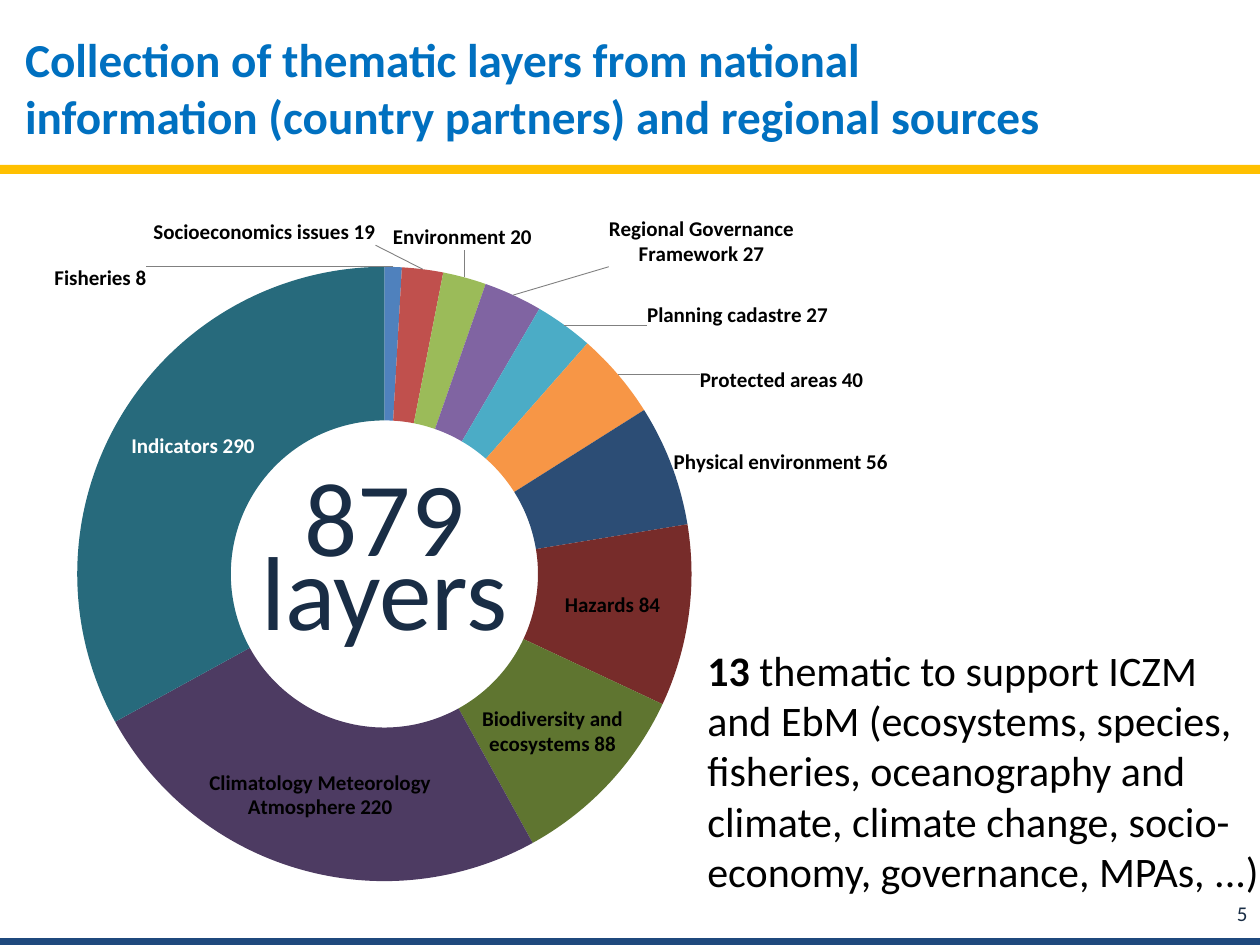
import math
import pptx
import pptx.chart.data
import pptx.dml.color
import pptx.enum.chart
import pptx.enum.shapes
import pptx.enum.text
import pptx.oxml
import pptx.oxml.ns
import pptx.util

SCALE = 914400 / 126
FACE = "Calibri"
INK = {
    "gold": "FFC000", "navy": "1F497D", "title": "0070C0", "dark": "192D45",
    "black": "000000", "white": "FFFFFF", "grey": "808080",
}
THEMES = [
    ("Fisheries", 8, "4F81BD"),
    ("Socioeconomics issues", 19, "C0504D"),
    ("Environment", 20, "9BBB59"),
    ("Regional Governance Framework", 27, "8064A2"),
    ("Planning cadastre", 27, "4BACC6"),
    ("Protected areas", 40, "F79646"),
    ("Physical environment", 56, "2C4D75"),
    ("Hazards", 84, "772C2A"),
    ("Biodiversity and ecosystems", 88, "5F7530"),
    ("Climatology Meteorology Atmosphere", 220, "4D3B62"),
    ("Indicators", 290, "276A7C"),
]
SPOTS = {
    0: (100, 278), 1: (264, 232), 2: (462, 237), 3: (701, 241),
    4: (737, 315), 5: (781, 380), 6: (780, 461), 10: (193, 445),
}
CHART = (-11, 204, 1125, 707)
HUB = (384, 573)
RING = 230
ALIGN = pptx.enum.text.PP_ALIGN
ANCHOR = pptx.enum.text.MSO_ANCHOR


def px(num):
    return pptx.util.Emu(round(num * SCALE))


def rgb(ink):
    return pptx.dml.color.RGBColor.from_string(ink)


def style(font, size, ink, bold=False):
    font.name = FACE
    font.size = pptx.util.Pt(size)
    font.bold = bold
    font.color.rgb = rgb(ink)


def place(shape, box):
    shape.left, shape.top, shape.width, shape.height = map(px, box)


def write(shape, text, size=24, ink="black", bold=False, lead="",
          align=ALIGN.LEFT, anchor=ANCHOR.TOP, space=None):
    frame = shape.text_frame
    frame.word_wrap = True
    frame.auto_size = pptx.enum.text.MSO_AUTO_SIZE.NONE
    frame.vertical_anchor = anchor
    para = frame.paragraphs[0]
    para.alignment = align
    if space:
        para.line_spacing = pptx.util.Pt(space)
    for part, heavy in ((lead, True), (text, bold)):
        if part:
            run = para.add_run()
            run.text = part
            style(run.font, size, INK[ink], heavy)


def note(slide, box, text, **look):
    write(slide.shapes.add_textbox(*map(px, box)), text, **look)


def band(slide, box, ink):
    bar = slide.shapes.add_shape(
        pptx.enum.shapes.MSO_SHAPE.RECTANGLE, *map(px, box))
    bar.shadow.inherit = False
    bar.fill.solid()
    bar.fill.fore_color.rgb = rgb(INK[ink])
    bar.line.fill.background()


def node(body):
    return pptx.oxml.parse_xml(body.replace(
        ">", " " + pptx.oxml.ns.nsdecls("c", "a") + ">", 1))


def layout(**vals):
    rows = "".join(f'<c:{key} val="{val}"/>' for key, val in vals.items())
    return node(f"<c:layout><c:manualLayout>{rows}"
                "</c:manualLayout></c:layout>")


def show(item):
    for flag in item.xpath("c:showVal | c:showCatName"):
        flag.set("val", "1")
    item.xpath("c:showBubbleSize")[0].addnext(
        node("<c:separator> </c:separator>"))


def shift(index):
    vals = [val for _, val, _ in THEMES]
    turn = math.tau * (sum(vals[:index]) + vals[index] / 2) / sum(vals)
    mid = (HUB[0] + RING * math.sin(turn), HUB[1] - RING * math.cos(turn))
    return [round((spot - base) / full, 4)
            for spot, base, full in zip(SPOTS[index], mid, CHART[2:])]


def label(series):
    labels = series.data_labels
    style(labels.font, 12, INK["black"], True)
    root = labels._element
    show(root)
    for index in SPOTS:
        ink = "white" if index == 10 else "black"
        style(series.points[index].data_label.font, 12, INK[ink], True)
        item = root.xpath(f'c:dLbl[c:idx/@val="{index}"]')[0]
        show(item)
        left, top = shift(index)
        item.xpath("c:idx")[0].addnext(layout(x=left, y=top))
    for old in root.xpath("c:showLeaderLines"):
        root.remove(old)
    lead = node('<c:leaderLines><c:spPr><a:ln w="6350"><a:solidFill>'
                f'<a:srgbClr val="{INK["grey"]}"/></a:solidFill></a:ln>'
                "</c:spPr></c:leaderLines>")
    flag = node('<c:showLeaderLines val="1"></c:showLeaderLines>')
    root.xpath("c:separator")[0].addnext(flag)
    flag.addnext(lead)


def ring(slide):
    data = pptx.chart.data.CategoryChartData()
    data.categories = [name for name, _, _ in THEMES]
    data.add_series("Series 1", [val for _, val, _ in THEMES])
    chart = slide.shapes.add_chart(
        pptx.enum.chart.XL_CHART_TYPE.DOUGHNUT, *map(px, CHART), data).chart
    chart.has_title = False
    chart.has_legend = False
    style(chart.font, 12, INK["black"])
    plot = chart.plots[0]
    plot.vary_by_categories = True
    series = plot.series[0]
    for index, (_, _, ink) in enumerate(THEMES):
        form = series.points[index].format
        form.fill.solid()
        form.fill.fore_color.rgb = rgb(ink)
        form.line.fill.background()
    label(series)
    area = chart._chartSpace.xpath("c:chart/c:plotArea")[0]
    for old in area.xpath("c:layout"):
        area.remove(old)
    area.insert(0, layout(layoutTarget="inner", xMode="edge", yMode="edge",
                          x=0.026, y=0.089, w=0.651, h=0.869))


def main():
    deck = pptx.Presentation()
    deck.slide_width, deck.slide_height = px(1260), px(945)
    slide = deck.slides.add_slide(deck.slide_layouts[5])
    band(slide, (0, 165, 1260, 9), "gold")
    band(slide, (0, 938, 1260, 9), "navy")
    title = slide.shapes.title
    place(title, (16, 25, 1071, 158))
    frame = title.text_frame
    frame.margin_left = frame.margin_right = px(9)
    frame.margin_top = frame.margin_bottom = px(5)
    write(title, "Collection of thematic layers from national information "
          "(country partners) and regional sources",
          size=27, ink="title", bold=True)
    note(slide, (1196, 888, 64, 50), "5", size=12, ink="dark",
         align=ALIGN.RIGHT, anchor=ANCHOR.MIDDLE)
    ring(slide)
    note(slide, (244, 498, 281, 161), "879 layers", size=60, ink="dark",
         align=ALIGN.CENTER, space=42)
    note(slide, (695, 638, 578, 267),
         "thematic to support ICZM and EbM (ecosystems, species, fisheries, "
         "oceanography and climate, climate change, socio-economy, "
         "governance, MPAs, ...)", lead="13 ")
    deck.save("out.pptx")


if __name__ == "__main__":
    main()
